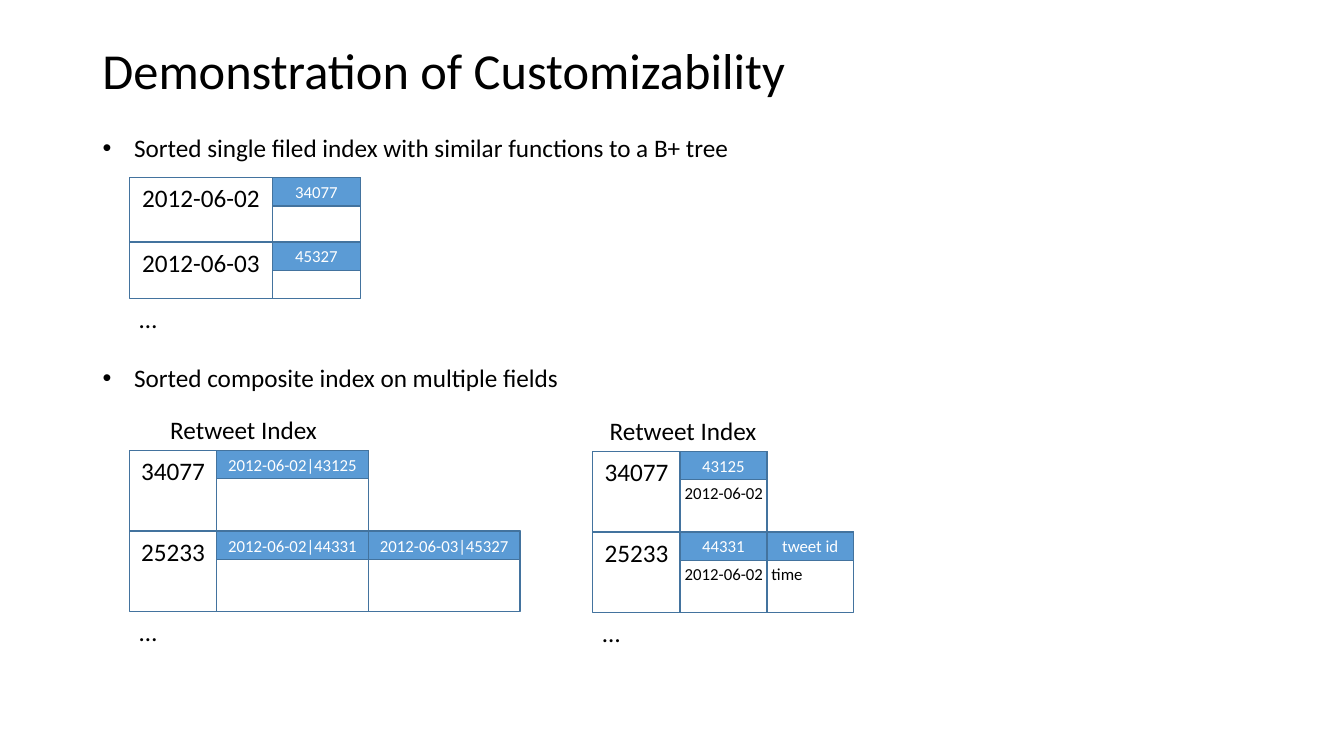
from lxml import etree
from pptx import Presentation
from pptx.dml.color import RGBColor
from pptx.enum import shapes, text
from pptx.oxml import ns
from pptx.util import Pt

COLORS = {"black": "000000", "white": "FFFFFF", "blue": "5B9BD5", "outline": "43739E"}
FONT = "Calibri"
HEADER_HEIGHT = 20.2


def color(name):
    return RGBColor.from_string(COLORS[name])


def write(frame, words, size, color_name, align=text.PP_ALIGN.LEFT):
    frame.text = words
    frame.word_wrap = True
    paragraph = frame.paragraphs[0]
    paragraph.alignment = align
    font = paragraph.runs[0].font
    font.name = FONT
    font.size = Pt(size)
    font.color.rgb = color(color_name)
    return paragraph


def add_title(slide, words):
    title = slide.shapes.title
    title.left, title.top, title.width, title.height = Pt(66), Pt(0), Pt(862), Pt(104.4)
    paragraph = write(title.text_frame, words, 36, "black")
    paragraph.line_spacing = 0.9
    title.text_frame.vertical_anchor = text.MSO_ANCHOR.MIDDLE
    title.text_frame.auto_size = text.MSO_AUTO_SIZE.NONE


def add_label(slide, words, left, top, width, size=18):
    box = slide.shapes.add_textbox(Pt(left), Pt(top), Pt(width), Pt(size * 1.2 + 7.2))
    paragraph = write(box.text_frame, words, size, "black")
    box.text_frame.auto_size = text.MSO_AUTO_SIZE.SHAPE_TO_FIT_TEXT
    return paragraph


def add_bullet(slide, words, top, width):
    paragraph = add_label(slide, words, 66.2, top, width)
    properties = paragraph._p.get_or_add_pPr()
    properties.set("marL", str(Pt(22.5)))
    properties.set("indent", str(-Pt(22.5)))
    etree.SubElement(properties, ns.qn("a:buFont")).set("typeface", "Arial")
    etree.SubElement(properties, ns.qn("a:buChar")).set("char", "•")


def add_cell(slide, left, top, width, height, words="", header=False):
    cell = slide.shapes.add_shape(
        shapes.MSO_SHAPE.RECTANGLE, Pt(left), Pt(top), Pt(width), Pt(height))
    cell.shadow.inherit = False
    cell.line.color.rgb = color("outline")
    cell.line.width = Pt(1)
    if header:
        cell.fill.solid()
        cell.fill.fore_color.rgb = color("blue")
    else:
        cell.fill.background()
    if words:
        frame = cell.text_frame
        size, color_name = (12, "white") if header else (18, "black")
        write(frame, words, size, color_name, text.PP_ALIGN.CENTER)
        frame.margin_left = frame.margin_right = Pt(0)
        frame.vertical_anchor = text.MSO_ANCHOR.MIDDLE if header else text.MSO_ANCHOR.TOP


def add_index_row(slide, left, top, height, key, key_width, entries, entry_width):
    add_cell(slide, left, top, key_width, height, key)
    for column, (name, value) in enumerate(entries):
        entry_left = left + key_width + column * entry_width
        add_cell(slide, entry_left, top, entry_width, height)
        add_cell(slide, entry_left, top, entry_width, HEADER_HEIGHT, name, header=True)
        if value:
            add_label(slide, value, entry_left - 3.8, top + 19, 74.2, size=12)


def add_index(slide, left, top, heights, key_width, entry_width, rows):
    for height, (key, entries) in zip(heights, rows):
        add_index_row(slide, left, top, height, key, key_width, entries, entry_width)
        top += height
    add_label(slide, "…", left, top, 77)


def main():
    presentation = Presentation()
    presentation.slide_width, presentation.slide_height = Pt(960), Pt(540)
    slide = presentation.slides.add_slide(presentation.slide_layouts[5])
    add_title(slide, "Demonstration of Customizability")

    add_bullet(slide, "Sorted single filed index with similar functions to a B+ tree", 90.9, 518.4)
    add_index(slide, 92.4, 127, (45.9, 40.3), 102.2, 62.8, [
        ("2012-06-02", [("34077", "")]),
        ("2012-06-03", [("45327", "")]),
    ])

    add_bullet(slide, "Sorted composite index on multiple fields", 255.6, 598.3)
    add_label(slide, "Retweet Index", 114.5, 292.5, 137.5)
    add_index(slide, 92.4, 321.8, (57.6, 57.6), 62.4, 108.4, [
        ("34077", [("2012-06-02|43125", "")]),
        ("25233", [("2012-06-02|44331", ""), ("2012-06-03|45327", "")]),
    ])
    add_label(slide, "Retweet Index", 428.4, 293.2, 137.5)
    add_index(slide, 423.4, 322.4, (57.6, 57.6), 62.4, 62, [
        ("34077", [("43125", "2012-06-02")]),
        ("25233", [("44331", "2012-06-02"), ("tweet id", "time")]),
    ])
    presentation.save("out.pptx")


if __name__ == "__main__":
    main()
